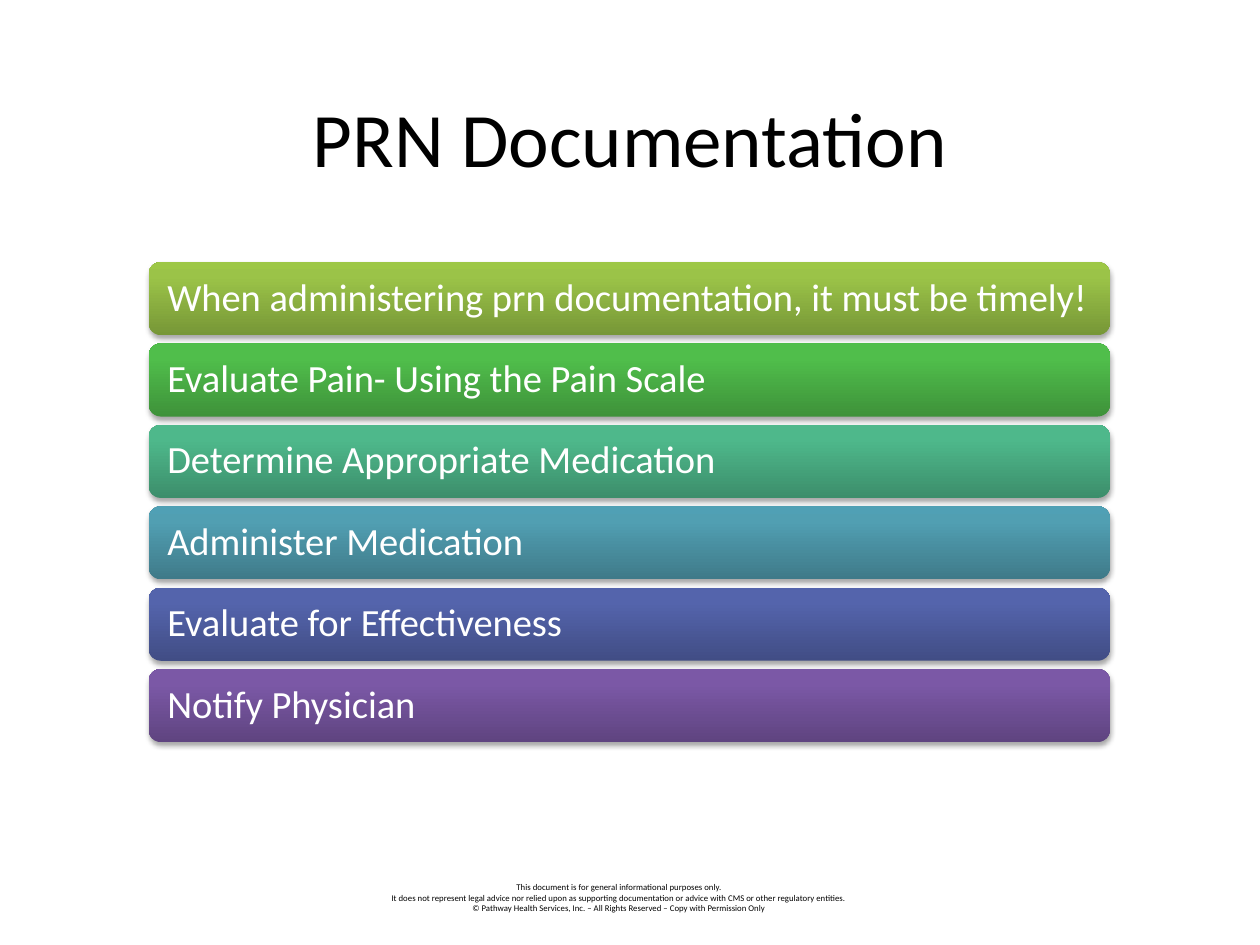
from lxml.etree import SubElement
from pptx import Presentation
from pptx.dml.color import RGBColor
from pptx.enum.shapes import MSO_SHAPE as Shape
from pptx.enum.text import MSO_ANCHOR as Anchor, PP_ALIGN as Align
from pptx.oxml.ns import qn
from pptx.util import Inches, Pt

LEFT, TOP, WIDTH, HEIGHT = 1.18, 2.08, 7.63, 0.58
PITCH = 0.646

STEPS = [
    ("When administering prn documentation, it must be timely!", "779737", "9BC348", "9DC746"),
    ("Evaluate Pain- Using the Pain Scale", "3E923A", "50BE4B", "4FC149"),
    ("Determine Appropriate Medication", "3C8E6B", "4EB88B", "4CBB8C"),
    ("Administer Medication", "3F7A89", "519FB2", "50A0B5"),
    ("Evaluate for Effectiveness", "414D85", "5464AC", "5363AF"),
    ("Notify Physician", "5F4480", "7B58A6", "7C57A8"),
]
NOTICE = [
    "This document is for general informational purposes only.",
    "It does not represent legal advice nor relied upon as supporting documentation "
    "or advice with CMS or other regulatory entities.",
    "© Pathway Health Services, Inc. – All Rights Reserved – Copy with Permission Only",
]


def add_run(paragraph, text, size, color):
    run = paragraph.add_run()
    run.text = text
    run.font.name = "Calibri"
    run.font.size = Pt(size)
    run.font.color.rgb = RGBColor.from_string(color)


def add_color(parent, color):
    """Append an a:srgbClr element and return it."""
    return SubElement(parent, qn("a:srgbClr"), val=color)


presentation = Presentation()
presentation.slide_width, presentation.slide_height = Inches(10), Inches(7.5)
slide = presentation.slides.add_slide(presentation.slide_layouts[5])

# Title
title = slide.shapes.title
title.left, title.top = Inches(1.54), Inches(0.36)
title.width, title.height = Inches(6.92), Inches(1.45)
title.text_frame.vertical_anchor = Anchor.MIDDLE
paragraph = title.text_frame.paragraphs[0]
paragraph.alignment = Align.CENTER
add_run(paragraph, "PRN Documentation", 44, "000000")

# Notice at the foot
notice = slide.shapes.add_textbox(Inches(2.75), Inches(6.95), Inches(4.33), Inches(0.35))
frame = notice.text_frame
frame.word_wrap = True
for index, line in enumerate(NOTICE):
    paragraph = frame.add_paragraph() if index else frame.paragraphs[0]
    paragraph.alignment = Align.CENTER
    add_run(paragraph, line, 5, "000000")

# One bar for each step
for row, (text, *colors) in enumerate(STEPS):
    bar = slide.shapes.add_shape(
        Shape.ROUNDED_RECTANGLE,
        Inches(LEFT), Inches(TOP + row * PITCH), Inches(WIDTH), Inches(HEIGHT),
    )
    bar.line.fill.background()

    bar.fill.gradient()
    bar.fill.gradient_angle = 90
    properties = bar._element.spPr
    stops = properties.find(qn("a:gradFill")).find(qn("a:gsLst"))
    stops.clear()
    for percent, color in zip((0, 80, 100), colors):
        add_color(SubElement(stops, qn("a:gs"), pos=str(percent * 1000)), color)

    bar.shadow.inherit = False
    shadow = SubElement(
        properties.find(qn("a:effectLst")), qn("a:outerShdw"),
        blurRad=str(Pt(3.1)), dist=str(Pt(1.8)), dir="5400000", rotWithShape="0",
    )
    SubElement(add_color(shadow, "000000"), qn("a:alpha"), val="35000")

    frame = bar.text_frame
    frame.word_wrap = True
    frame.vertical_anchor = Anchor.MIDDLE
    frame.margin_left = frame.margin_right = Inches(0.12)
    frame.margin_top = frame.margin_bottom = Inches(0.09)
    paragraph = frame.paragraphs[0]
    paragraph.alignment = Align.LEFT
    paragraph.line_spacing = 0.9
    add_run(paragraph, text, 22, "FFFFFF")

presentation.save("out.pptx")
